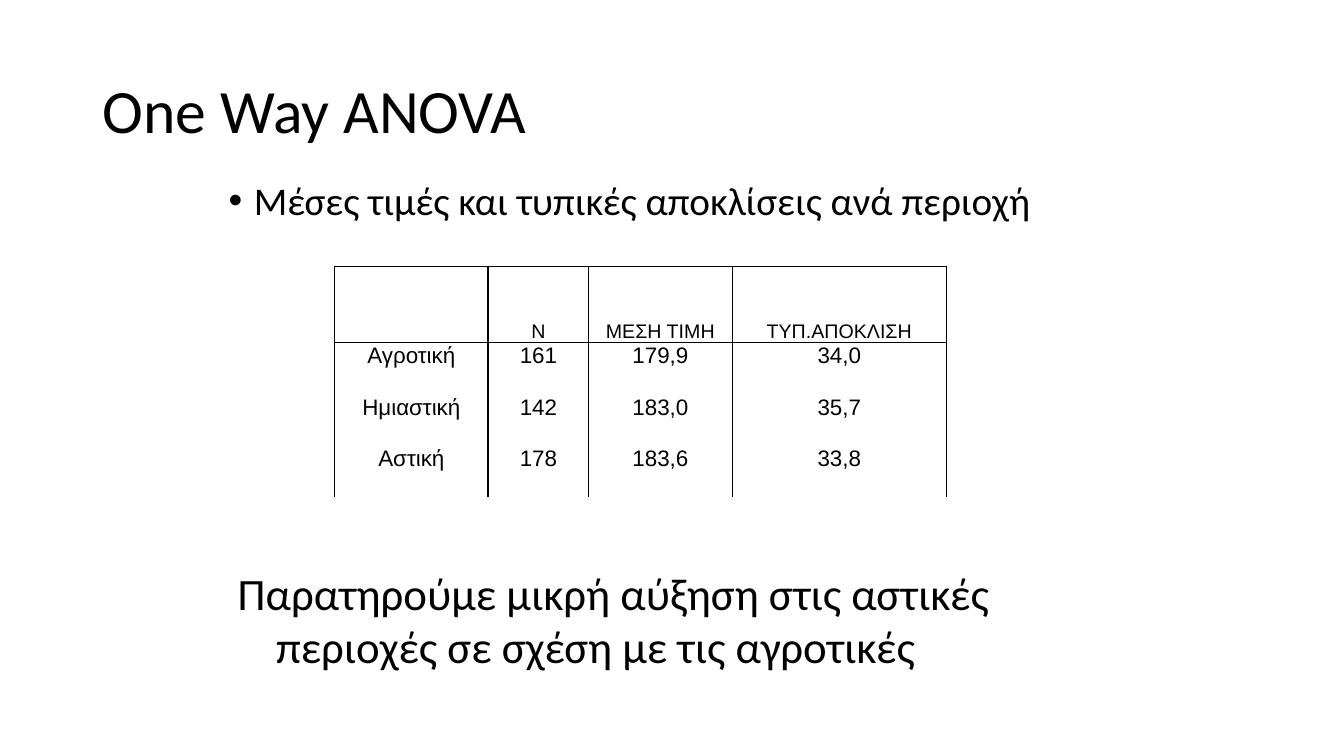
from dataclasses import dataclass

from lxml.etree import SubElement
from pptx import Presentation
from pptx.dml.color import RGBColor
from pptx.enum.text import MSO_ANCHOR, MSO_AUTO_SIZE, PP_ALIGN
from pptx.oxml.ns import qn
from pptx.util import Inches, Pt


@dataclass(frozen=True)
class Theme:
    """Colours, fonts and type sizes of the slide."""

    ink: str = "000000"
    text_font: str = "Calibri"
    table_font: str = "Arial"
    title_size: int = 44
    bullet_size: int = 28
    conclusion_size: int = 32
    header_size: int = 14
    value_size: int = 16


THEME = Theme()
COLUMN_WIDTHS = (1.52, 1, 1.42, 2.13)
ROW_HEIGHTS = (0.76, 0.51, 0.51, 0.51)
COLUMN_RULES = (1, 1, 0.5, 0.5, 0.5)
REGION_STATISTICS = (
    ("", "N", "ΜΕΣΗ ΤΙΜΗ", "ΤΥΠ.ΑΠΟΚΛΙΣΗ"),
    ("Αγροτική", "161", "179,9", "34,0"),
    ("Ημιαστική", "142", "183,0", "35,7"),
    ("Αστική", "178", "183,6", "33,8"),
)


def style_font(font, name, size):
    """Apply a typeface and size in the ink colour."""
    font.name = name
    font.size = Pt(size)
    font.bold = False
    font.color.rgb = RGBColor.from_string(THEME.ink)


def place(shape, box):
    """Move a shape to a box given in inches."""
    shape.left, shape.top, shape.width, shape.height = map(Inches, box)


def set_borders(cell, widths):
    """Draw the named cell sides in points, hiding those of zero width."""
    properties = cell._tc.get_or_add_tcPr()
    for side, width in widths.items():
        line = SubElement(properties, qn(f"a:ln{side}"), w=str(int(Pt(width))))
        if width:
            fill = SubElement(line, qn("a:solidFill"))
            SubElement(fill, qn("a:srgbClr"), val=THEME.ink)
        else:
            SubElement(line, qn("a:noFill"))


def add_title(slide, box, text):
    """Fill and place the title placeholder."""
    title = slide.shapes.title
    place(title, box)
    frame = title.text_frame
    frame.text = text
    frame.word_wrap = True
    frame.auto_size = MSO_AUTO_SIZE.NONE
    frame.vertical_anchor = MSO_ANCHOR.MIDDLE
    paragraph = frame.paragraphs[0]
    paragraph.alignment = PP_ALIGN.LEFT
    paragraph.line_spacing = 0.9
    style_font(paragraph.font, THEME.text_font, THEME.title_size)


def add_hanging_text(slide, box, text, size, indent, space_before, bullet=None):
    """Add a paragraph with a hanging indent and an optional bullet."""
    frame = slide.shapes.add_textbox(*map(Inches, box)).text_frame
    frame.word_wrap = True
    paragraph = frame.paragraphs[0]
    paragraph.text = text
    paragraph.space_before = Pt(space_before)
    style_font(paragraph.font, THEME.text_font, size)
    properties = paragraph._p.get_or_add_pPr()
    properties.set("marL", str(Inches(indent)))
    properties.set("indent", str(-Inches(indent)))
    if bullet:
        paragraph.line_spacing = 0.9
        bullet_font = SubElement(properties, qn("a:buFont"), typeface=THEME.table_font)
        bullet_font.addnext(properties.makeelement(qn("a:buChar"), {"char": bullet}))
        properties.append(properties.find(qn("a:defRPr")))


def format_cell(cell, text, row, column):
    """Write one table cell and draw its borders."""
    header = row == 0
    cell.margin_left = cell.margin_right = cell.margin_top = Inches(0.01)
    cell.margin_bottom = 0
    cell.vertical_anchor = MSO_ANCHOR.BOTTOM if header else MSO_ANCHOR.TOP
    cell.text = text
    paragraph = cell.text_frame.paragraphs[0]
    paragraph.alignment = PP_ALIGN.CENTER
    size = THEME.header_size if header else THEME.value_size
    style_font(paragraph.font, THEME.table_font, size)
    set_borders(cell, {
        "L": COLUMN_RULES[column],
        "R": COLUMN_RULES[column + 1],
        "T": 1 if row <= 1 else 0,
        "B": 1 if header else 0,
    })
    cell.fill.background()


def add_statistics_table(slide, box):
    """Add the table of means and standard deviations by region."""
    table = slide.shapes.add_table(
        len(ROW_HEIGHTS), len(COLUMN_WIDTHS), *map(Inches, box)
    ).table
    table.first_row = table.horz_banding = False
    for column, width in zip(table.columns, COLUMN_WIDTHS):
        column.width = Inches(width)
    for row, height in zip(table.rows, ROW_HEIGHTS):
        row.height = Inches(height)
    for row, values in enumerate(REGION_STATISTICS):
        for column, text in enumerate(values):
            format_cell(table.cell(row, column), text, row, column)


def main():
    """Build and save the presentation."""
    presentation = Presentation()
    presentation.slide_width = Inches(13.33)
    presentation.slide_height = Inches(7.5)
    slide = presentation.slides.add_slide(presentation.slide_layouts[5])
    add_title(slide, (0.92, 0.4, 11.5, 1.45), "One Way ANOVA")
    add_statistics_table(slide, (3.32, 2.64, 6.06, 2.28))
    add_hanging_text(
        slide, (2.17, 1.75, 9, 1.21),
        "Μέσες τιμές και τυπικές αποκλίσεις ανά περιοχή",
        THEME.bullet_size, 0.25, 10, "•",
    )
    add_hanging_text(
        slide, (2.26, 5.56, 9, 1.21),
        "Παρατηρούμε μικρή αύξηση στις αστικές περιοχές σε σχέση με τις αγροτικές",
        THEME.conclusion_size, 0.38, 6.4,
    )
    presentation.save("out.pptx")


if __name__ == "__main__":
    main()
